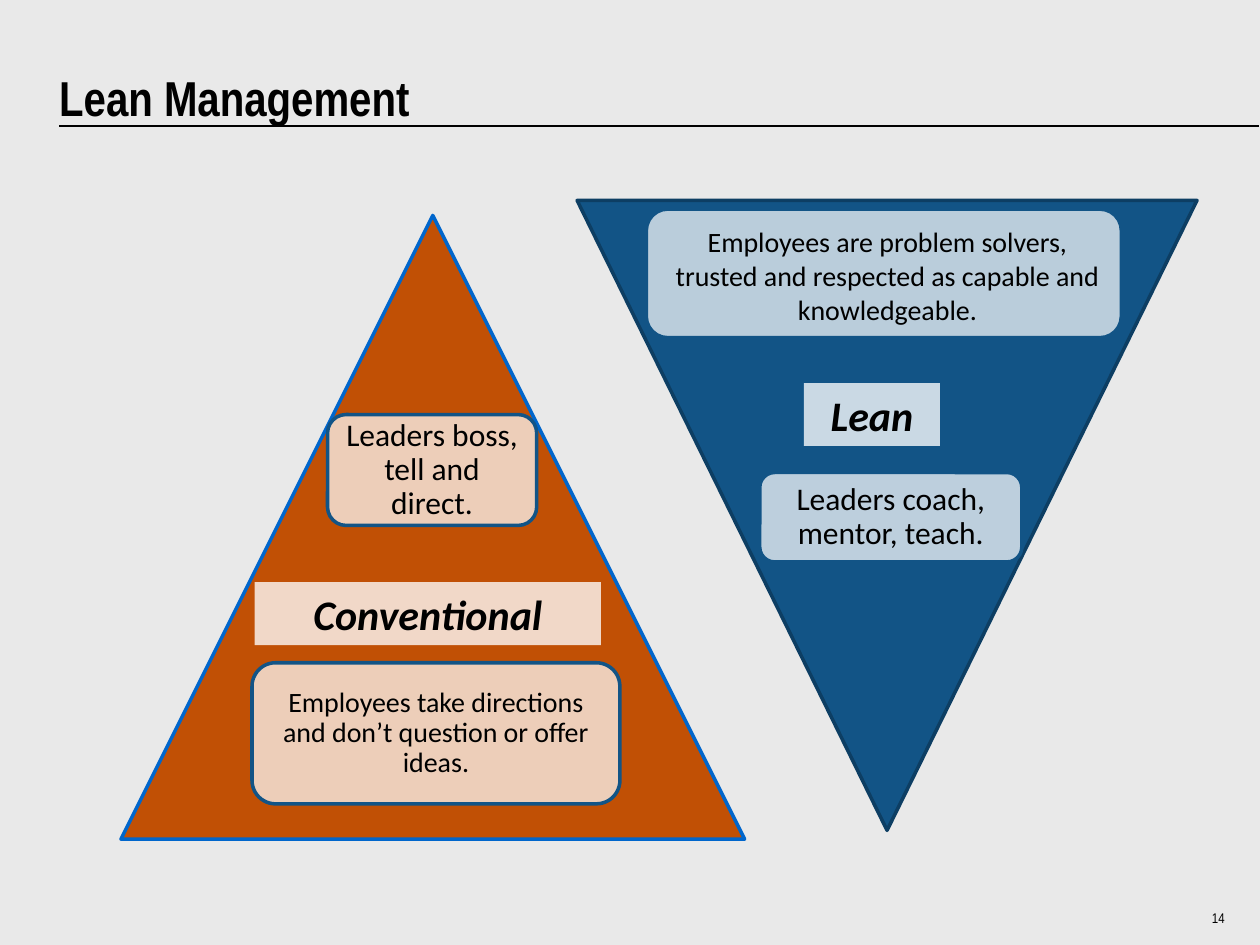
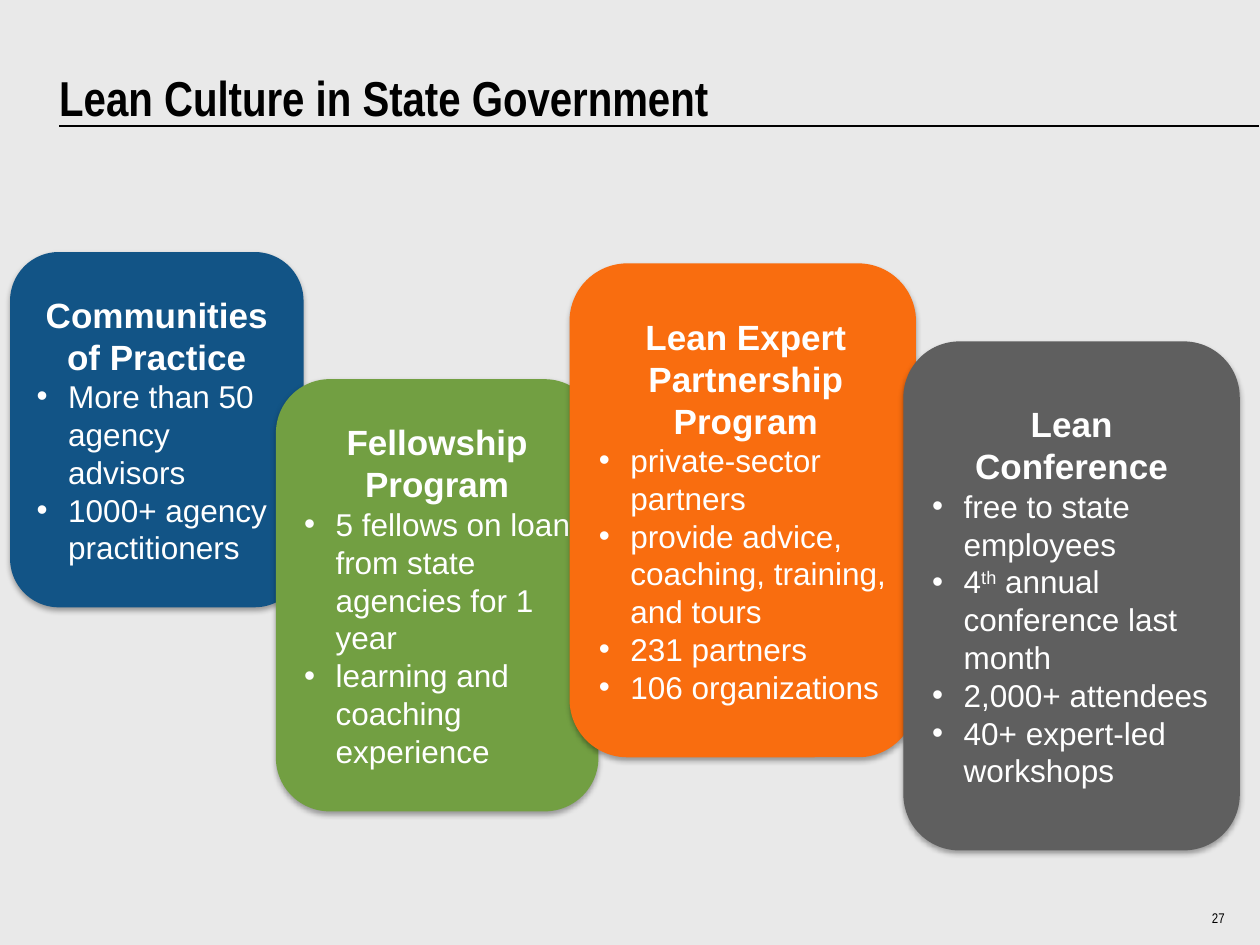
from lxml import etree
from pptx import Presentation
from pptx.dml.color import RGBColor
from pptx.enum.shapes import MSO_CONNECTOR, MSO_SHAPE
from pptx.enum.text import MSO_ANCHOR, PP_ALIGN
from pptx.oxml.ns import qn
from pptx.util import Inches, Pt

TRIANGLE = MSO_SHAPE.ISOSCELES_TRIANGLE
ROUNDED = MSO_SHAPE.ROUNDED_RECTANGLE
RECTANGLE = MSO_SHAPE.RECTANGLE
LEFT, CENTER, RIGHT = PP_ALIGN.LEFT, PP_ALIGN.CENTER, PP_ALIGN.RIGHT
TOP, MIDDLE, BOTTOM = MSO_ANCHOR.TOP, MSO_ANCHOR.MIDDLE, MSO_ANCHOR.BOTTOM

BACKGROUND, BLACK, WHITE = "E9E9E9", "000000", "FFFFFF"
BLUE, DARK_BLUE, BRIGHT_BLUE = "125486", "0D3E63", "0066CC"
RUST, GREEN, ORANGE, GRAY = "C15005", "729F42", "F96D0F", "5F5F5F"
NARROW, BODY, DIAGRAM = "Arial Narrow", "Arial", "Calibri"
DEFAULT_INSETS = (0.1, 0.05, 0.1, 0.05)

PROGRAM_CARDS = [
    ((0.08, 2, 2.33, 2.82), BLUE, DEFAULT_INSETS, "Communities of Practice",
     ["More than 50 agency advisors", "1000+ agency practitioners"]),
    ((2.19, 3.01, 2.56, 3.43), GREEN, DEFAULT_INSETS, "Fellowship Program",
     ["5 fellows on loan from state agencies for 1 year",
      "learning and coaching experience"]),
    ((4.52, 2.09, 2.75, 3.92), ORANGE, (0.1, 0.05, 0.05, 0.05),
     "Lean Expert Partnership Program",
     ["private-sector partners", "provide advice, coaching, training, and tours",
      "231 partners", "106 organizations"]),
    ((7.17, 2.71, 2.67, 4.04), GRAY, DEFAULT_INSETS, "Lean Conference",
     ["free to state employees", ("4", "th", " annual conference last month"),
      "2,000+ attendees", "40+ expert-led workshops"]),
]


def color(hex_value):
    return RGBColor.from_string(hex_value)


def inches(values):
    return [Inches(value) for value in values]


def format_runs(paragraph, font_name, size, text_color, bold=False, italic=False):
    for run in paragraph.runs:
        font = run.font
        font.name, font.size = font_name, Pt(size)
        font.bold, font.italic = bold, italic
        font.color.rgb = color(text_color)


def set_frame(text_frame, anchor, insets=DEFAULT_INSETS):
    text_frame.word_wrap = True
    text_frame.vertical_anchor = anchor
    (text_frame.margin_left, text_frame.margin_top,
     text_frame.margin_right, text_frame.margin_bottom) = inches(insets)


def add_text(slide, box, text, size, anchor, alignment, insets, bold=False):
    text_frame = slide.shapes.add_textbox(*inches(box)).text_frame
    set_frame(text_frame, anchor, insets)
    text_frame.text = text
    paragraph = text_frame.paragraphs[0]
    paragraph.alignment = alignment
    format_runs(paragraph, NARROW, size, BLACK, bold)


def add_shape(slide, kind, box, fill, line=None, opacity=100):
    shape = slide.shapes.add_shape(kind, *inches(box))
    shape.shadow.inherit = False
    shape.fill.solid()
    shape.fill.fore_color.rgb = color(fill)
    if opacity < 100:
        fill_color = shape.fill._xPr.find(qn("a:solidFill"))[0]
        etree.SubElement(fill_color, qn("a:alpha"), val=str(opacity * 1000))
    if line:
        shape.line.color.rgb = color(line)
        shape.line.width = Pt(2)
    else:
        shape.line.fill.background()
    return shape


def add_note(slide, box, lines, size, opacity=72, line_spacing=0.9,
             insets=(0.07, 0.07, 0.07, 0.07)):
    """Add a translucent rounded panel with centred text."""
    text_frame = add_shape(slide, ROUNDED, box, WHITE, BLUE, opacity).text_frame
    set_frame(text_frame, MIDDLE, insets)
    text_frame.text = "\n".join(lines)
    for paragraph in text_frame.paragraphs:
        paragraph.alignment = CENTER
        paragraph.line_spacing = line_spacing
        format_runs(paragraph, DIAGRAM, size, BLACK)


def add_label(slide, box, text):
    text_frame = add_shape(slide, RECTANGLE, box, WHITE, opacity=78).text_frame
    set_frame(text_frame, TOP)
    text_frame.text = text
    paragraph = text_frame.paragraphs[0]
    paragraph.alignment = CENTER
    format_runs(paragraph, DIAGRAM, 24, BLACK, bold=True, italic=True)


def add_soft_shadow(shape):
    effects = shape._element.spPr.find(qn("a:effectLst"))
    shadow = etree.SubElement(
        effects, qn("a:outerShdw"), blurRad=str(Pt(3.1)), dist=str(Pt(1.8)),
        dir="5400000", rotWithShape="0")
    shadow_color = etree.SubElement(shadow, qn("a:srgbClr"), val=BLACK)
    etree.SubElement(shadow_color, qn("a:alpha"), val="35000")


def make_bullet(paragraph):
    properties = paragraph._p.get_or_add_pPr()
    properties.set("marL", str(Inches(0.25)))
    properties.set("indent", str(Inches(-0.25)))
    etree.SubElement(properties, qn("a:buFont"), typeface=BODY)
    etree.SubElement(properties, qn("a:buChar"), char="•")


def add_bullet(text_frame, content):
    """Add a bullet; a tuple holds text before, in and after a superscript."""
    paragraph = text_frame.add_paragraph()
    paragraph.alignment = LEFT
    make_bullet(paragraph)
    parts = content if isinstance(content, tuple) else (content,)
    for index, part in enumerate(parts):
        run = paragraph.add_run()
        run.text = part
        if index == 1:
            run._r.get_or_add_rPr().set("baseline", "30000")
    format_runs(paragraph, BODY, 18, WHITE)


def add_card(slide, box, fill, insets, heading, bullets):
    card = add_shape(slide, ROUNDED, box, fill)
    add_soft_shadow(card)
    text_frame = card.text_frame
    set_frame(text_frame, MIDDLE, insets)
    text_frame.text = heading
    paragraph = text_frame.paragraphs[0]
    paragraph.alignment = CENTER
    format_runs(paragraph, BODY, 20, WHITE, bold=True)
    for bullet in bullets:
        add_bullet(text_frame, bullet)


def add_title_rule(slide):
    rule = slide.shapes.add_connector(
        MSO_CONNECTOR.STRAIGHT, *inches((0.47, 1, 9.99, 1)))
    rule.line.color.rgb = color(BLACK)
    rule.line.width = Pt(1)
    etree.SubElement(rule._element.spPr, qn("a:effectLst"))


def add_base_slide(presentation, title, number):
    slide = presentation.slides.add_slide(presentation.slide_layouts[6])
    slide.background.fill.solid()
    slide.background.fill.fore_color.rgb = color(BACKGROUND)
    add_text(slide, (9.29, 7.18, 0.43, 0.25), number, 8, TOP, RIGHT, (0, 0.04, 0, 0))
    add_title_rule(slide)
    add_text(slide, (0.47, 0.19, 9.02, 0.81), title, 28, BOTTOM, LEFT,
             (0, 0, 0, 0), bold=True)
    return slide


def build_management_slide(presentation):
    slide = add_base_slide(presentation, "Lean Management", "14")
    lean_triangle = add_shape(slide, TRIANGLE, (4.58, 1.59, 4.92, 5), BLUE, DARK_BLUE)
    lean_triangle.rotation = 180
    add_shape(slide, TRIANGLE, (0.96, 1.71, 4.95, 4.95), RUST, BRIGHT_BLUE)

    add_note(slide, (2, 5.26, 2.92, 1.12),
             ["Employees take directions and don’t question or offer ideas."], 16)
    add_note(slide, (2.6, 3.29, 1.66, 0.88), ["Leaders boss, tell and direct."], 18)
    add_note(slide, (6.03, 3.75, 2.08, 0.71), ["Leaders coach, mentor, teach."], 18)
    add_note(slide, (5.13, 1.66, 3.77, 1.02),
             ["Employees are problem solvers,",
              "trusted and respected as capable and knowledgeable."],
             16, opacity=71, line_spacing=1, insets=(0.1, 0.07, 0.04, 0.04))
    add_label(slide, (6.38, 3.04, 1.08, 0.5), "Lean")
    add_label(slide, (2.02, 4.62, 2.75, 0.5), "Conventional")


def build_culture_slide(presentation):
    slide = add_base_slide(presentation, "Lean Culture in State Government", "27")
    for card in PROGRAM_CARDS:
        add_card(slide, *card)


def main():
    presentation = Presentation()
    presentation.slide_width = Inches(10)
    presentation.slide_height = Inches(7.5)
    build_management_slide(presentation)
    build_culture_slide(presentation)
    presentation.save("out.pptx")


if __name__ == "__main__":
    main()
